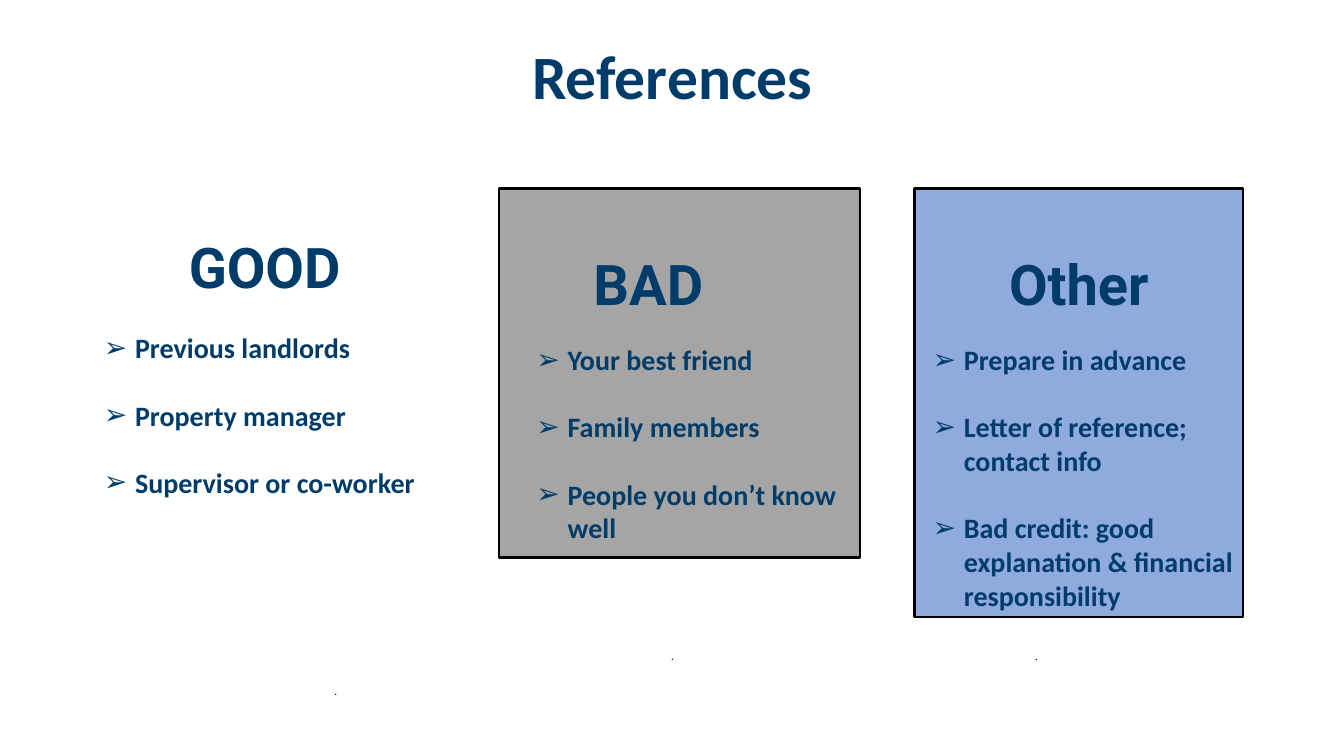
import pptx
import pptx.dml.color
import pptx.enum.shapes
import pptx.enum.text
import pptx.oxml
import pptx.oxml.ns
import pptx.util

Inches = pptx.util.Inches
Pt = pptx.util.Pt
ALIGN = pptx.enum.text.PP_ALIGN
ANCHOR = pptx.enum.text.MSO_ANCHOR
NAVY, BLACK, GREY, BLUE = "003C69", "000000", "A5A5A5", "8FAADC"


def rgb(value):
    return pptx.dml.color.RGBColor.from_string(value)


def place(sp, box):
    sp.left, sp.top, sp.width, sp.height = [Inches(v) for v in box]


def setup_frame(sp, anchor=ANCHOR.TOP):
    tf = sp.text_frame
    tf.word_wrap = True
    tf.auto_size = pptx.enum.text.MSO_AUTO_SIZE.NONE
    tf.vertical_anchor = anchor
    return tf


def add_run(p, text, size, font="Calibri", color=NAVY, bold=True):
    r = p.add_run()
    r.text = text
    r.font.size, r.font.name, r.font.bold = Pt(size), font, bold
    r.font.color.rgb = rgb(color)


def set_bullet(p, char=None):
    """Give the paragraph a hanging bullet, or none at all."""
    pPr = p._p.get_or_add_pPr()
    indent = Inches(0.31) if char else 0
    pPr.set("marL", str(indent))
    pPr.set("indent", str(-indent))
    ns = pptx.oxml.ns.nsdecls("a")
    if char:
        pPr.append(pptx.oxml.parse_xml(f'<a:buFont {ns} typeface="Arial"/>'))
        pPr.append(pptx.oxml.parse_xml(f'<a:buChar {ns} char="{char}"/>'))
    else:
        pPr.append(pptx.oxml.parse_xml(f'<a:buNone {ns}/>'))


def add_title(s, box, text):
    sp = s.shapes.title
    place(sp, box)
    p = setup_frame(sp, ANCHOR.MIDDLE).paragraphs[0]
    p.alignment, p.line_spacing = ALIGN.CENTER, 0.9
    add_run(p, text, 44)


def add_panel(s, box, heading, fill, right_inset=0):
    """Outlined panel with its heading near the top."""
    sp = s.shapes.add_shape(pptx.enum.shapes.MSO_SHAPE.RECTANGLE,
                            *[Inches(v) for v in box])
    sp.shadow.inherit = False
    sp.fill.solid()
    sp.fill.fore_color.rgb = rgb(fill)
    sp.line.color.rgb = rgb(BLACK)
    sp.line.width = Pt(1.75)
    tf = setup_frame(sp)
    tf.margin_left = tf.margin_bottom = 0
    tf.margin_top, tf.margin_right = Inches(0.68), Inches(right_inset)
    p = tf.paragraphs[0]
    p.alignment, p.line_spacing = ALIGN.CENTER, 0.9
    add_run(p, heading, 40, "Roboto")


def add_list(s, sp, box, items, heading=None):
    """Bulleted list, with an optional heading in the same box."""
    place(sp, box)
    s.shapes._spTree.append(sp._element)  # in front of the panels
    tf = setup_frame(sp)
    p = tf.paragraphs[0]
    if heading:
        p.alignment, p.space_before = ALIGN.CENTER, Pt(0)
        set_bullet(p)
        add_run(p, heading, 40, "Roboto")
    for i, item in enumerate(items):
        if i or heading:
            p = tf.add_paragraph()
        p.alignment = ALIGN.LEFT
        p.space_before = Pt(24 if i else 22 if heading else 0)
        set_bullet(p, "➢")
        add_run(p, item, 20)


def add_dot(s, left, top):
    sp = s.shapes.add_textbox(Inches(left), Inches(top), Inches(2.5), Inches(0.7))
    p = setup_frame(sp).paragraphs[0]
    p.alignment, p.line_spacing = ALIGN.CENTER, Pt(20)
    add_run(p, ".", 8, color=BLACK, bold=False)


def build_references(prs):
    s = prs.slides.add_slide(prs.slide_layouts.get_by_name("Comparison"))
    good, bad, spare, other = list(s.placeholders)[1:]
    spare._element.getparent().remove(spare._element)

    add_title(s, (0.92, 0.06, 11.5, 1.45), "References")

    # Panels
    add_panel(s, (4.95, 1.87, 3.58, 3.66), "BAD", GREY, right_inset=0.62)
    add_panel(s, (9.07, 1.87, 3.26, 4.25), "Other", BLUE)

    # Lists
    add_list(s, good, (0.93, 2.26, 3.39, 1.96),
             ["Previous landlords", "Property manager", "Supervisor or co-worker"],
             heading="GOOD")
    add_list(s, bad, (5.22, 3.35, 3.36, 0.8),
             ["Your best friend", "Family members", "People you don’t know well"])
    add_list(s, other, (9.15, 3.35, 3.26, 0.8),
             ["Prepare in advance", "Letter of reference; contact info",
              "Bad credit: good explanation & financial responsibility"])

    # Dots under the columns
    for left, top in ((2.08, 6.6), (5.42, 6.25), (9.03, 6.25)):
        add_dot(s, left, top)


def main():
    prs = pptx.Presentation()
    prs.slide_width, prs.slide_height = Inches(13.33), Inches(7.5)
    build_references(prs)
    prs.save("out.pptx")


if __name__ == "__main__":
    main()
